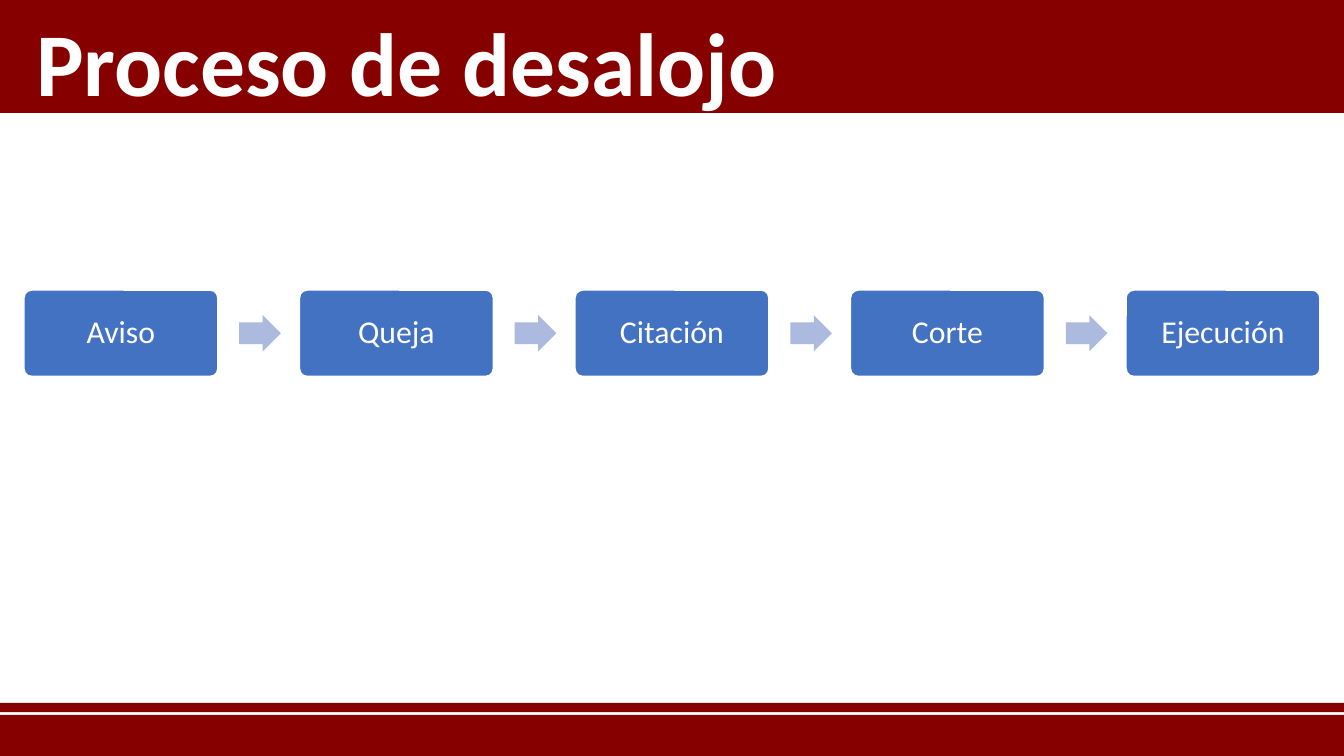
from pptx import Presentation
from pptx.dml.color import RGBColor
from pptx.enum import shapes, text
from pptx.util import Inches, Pt

# Content
TITLE = "Proceso de desalojo"
STEPS = ["Aviso", "Queja", "Citación", "Corte", "Ejecución"]
BANDS = [(-0.01, 0.85), (5.32, 0.31), (5.23, 0.07)]  # top, height

# Style
FONT = "Calibri"
MAROON = RGBColor(0x87, 0x00, 0x00)
BLUE = RGBColor(0x43, 0x72, 0xC3)
PALE_BLUE = RGBColor(0xAB, 0xBA, 0xDE)
WHITE = RGBColor(0xFF, 0xFF, 0xFF)

# Layout in inches
WIDTH = 10
HEIGHT = WIDTH * 9 / 16
STEP_WIDTH, STEP_HEIGHT, STEP_TOP = 1.46, 0.66, 2.15
STEP_PITCH = 2.05
STEP_LEFT = (WIDTH - STEP_WIDTH - STEP_PITCH * (len(STEPS) - 1)) / 2
ARROW_GAP, ARROW_WIDTH, ARROW_HEIGHT = 0.15, 0.31, 0.27


def add_shape(slide, kind, left, top, width, height, fill, adjustments=()):
    shape = slide.shapes.add_shape(
        kind, Inches(left), Inches(top), Inches(width), Inches(height))
    shape.shadow.inherit = False
    shape.fill.solid()
    shape.fill.fore_color.rgb = fill
    shape.line.fill.background()
    for index, value in enumerate(adjustments):
        shape.adjustments[index] = value
    return shape


def write(shape, words, size, spacing, align, inset_x, inset_y, bold=False):
    frame = shape.text_frame
    frame.word_wrap = True
    frame.vertical_anchor = text.MSO_ANCHOR.MIDDLE
    frame.margin_left = frame.margin_right = Inches(inset_x)
    frame.margin_top = frame.margin_bottom = Inches(inset_y)
    para = frame.paragraphs[0]
    para.text = words
    para.alignment = align
    para.line_spacing = spacing
    para.font.name = FONT
    para.font.size = Pt(size)
    para.font.bold = bold
    para.font.color.rgb = WHITE


def main():
    deck = Presentation()
    deck.slide_width, deck.slide_height = Inches(WIDTH), Inches(HEIGHT)
    page = deck.slides.add_slide(deck.slide_layouts[6])
    kinds = shapes.MSO_SHAPE

    # Header and footer bands
    for top, height in BANDS:
        add_shape(page, kinds.RECTANGLE, 0, top, WIDTH, height, MAROON)

    # Title
    title = page.shapes.add_textbox(
        Inches(0.17), Inches(0.15), Inches(9.99), Inches(0.74))
    write(title, TITLE, 48, 0.82, text.PP_ALIGN.LEFT, 0.1, 0.05, bold=True)

    # Process steps, with an arrow between neighbours
    for index, step in enumerate(STEPS):
        left = STEP_LEFT + index * STEP_PITCH
        box = add_shape(page, kinds.ROUNDED_RECTANGLE, left, STEP_TOP,
                        STEP_WIDTH, STEP_HEIGHT, BLUE, [0.1])
        box.line.color.rgb = WHITE
        box.line.width = Pt(2)
        write(box, step, 17, 0.9, text.PP_ALIGN.CENTER, 0.09, 0.09)
        if index < len(STEPS) - 1:
            add_shape(page, kinds.RIGHT_ARROW, left + STEP_WIDTH + ARROW_GAP,
                      STEP_TOP + (STEP_HEIGHT - ARROW_HEIGHT) / 2,
                      ARROW_WIDTH, ARROW_HEIGHT, PALE_BLUE, [0.6, 0.5])

    deck.save("out.pptx")


if __name__ == "__main__":
    main()
